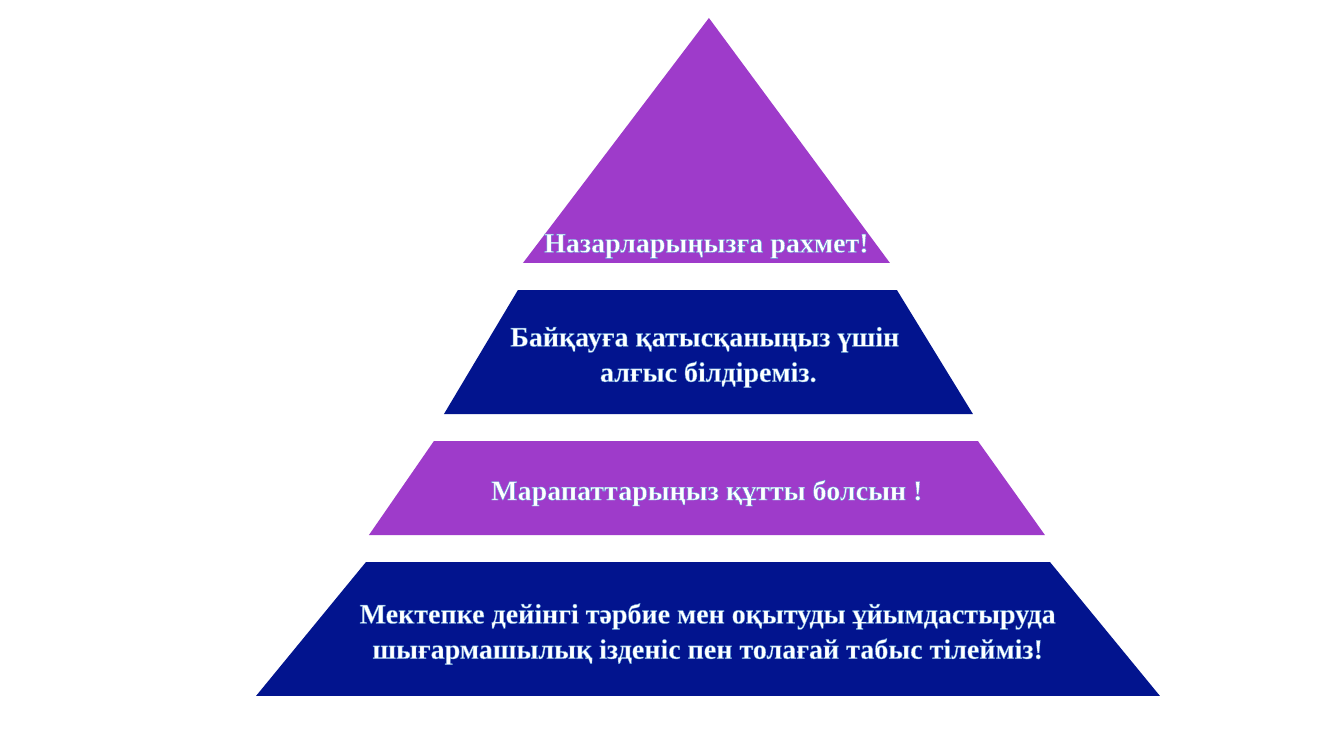
from lxml import etree
from pptx import Presentation
from pptx.dml.color import RGBColor
from pptx.enum.text import MSO_ANCHOR as Anchor, PP_ALIGN as Align
from pptx.oxml.ns import qn
from pptx.util import Pt

PX = 914400 / 100.8
WIDTH, HEIGHT = 1344, 756

PURPLE = RGBColor(0x9E, 0x3B, 0xCA)
NAVY = RGBColor(0x02, 0x14, 0x8E)
WHITE = RGBColor(0xFF, 0xFF, 0xFF)
OUTLINE = RGBColor(0x5B, 0x9B, 0xD5)

# top y, bottom y, top edge (left, right), bottom edge (left, right), fill, anchor, lines
TIERS = [
    (18, 263, (709, 709), (523, 890), PURPLE, Anchor.BOTTOM,
     ["Назарларыңызға рахмет!"]),
    (290, 414, (518, 897), (444, 973), NAVY, Anchor.MIDDLE,
     ["Байқауға қатысқаныңыз үшін ", "алғыс білдіреміз."]),
    (441, 535, (434, 978), (369, 1045), PURPLE, Anchor.MIDDLE,
     ["Марапаттарыңыз құтты болсын !"]),
    (562, 696, (366, 1050), (256, 1160), NAVY, Anchor.MIDDLE,
     ["Мектепке дейінгі тәрбие мен оқытуды ұйымдастыруда "
      "шығармашылық ізденіс пен толағай табыс тілейміз!"]),
]


def px(value):
    return round(value * PX)


def outline_text(run):
    ln = etree.Element(qn("a:ln"), w=str(Pt(0.8)))
    fill = etree.SubElement(ln, qn("a:solidFill"))
    etree.SubElement(fill, qn("a:srgbClr"), val=str(OUTLINE))
    run._r.get_or_add_rPr().insert(0, ln)


def add_tier(slide, top, bottom, top_edge, bottom_edge, color, anchor, lines):
    builder = slide.shapes.build_freeform(bottom_edge[0], bottom, scale=PX)
    corners = [(top_edge[0], top), (top_edge[1], top), (bottom_edge[1], bottom)]
    builder.add_line_segments(list(dict.fromkeys(corners)), close=True)
    sp = builder.convert_to_shape()
    sp.shadow.inherit = False
    sp.fill.solid()
    sp.fill.fore_color.rgb = color
    sp.line.fill.background()

    tf = sp.text_frame
    tf.word_wrap = True
    tf.vertical_anchor = anchor
    for i, line in enumerate(lines):
        p = tf.add_paragraph() if i else tf.paragraphs[0]
        p.alignment = Align.CENTER
        p.line_spacing = 1.05
        r = p.add_run()
        r.text = line
        r.font.name = "Times New Roman"
        r.font.size = Pt(20)
        r.font.bold = True
        r.font.color.rgb = WHITE
        outline_text(r)


def main():
    prs = Presentation()
    prs.slide_width, prs.slide_height = px(WIDTH), px(HEIGHT)
    s = prs.slides.add_slide(prs.slide_layouts[6])
    for tier in TIERS:
        add_tier(s, *tier)
    prs.save("out.pptx")


if __name__ == "__main__":
    main()
